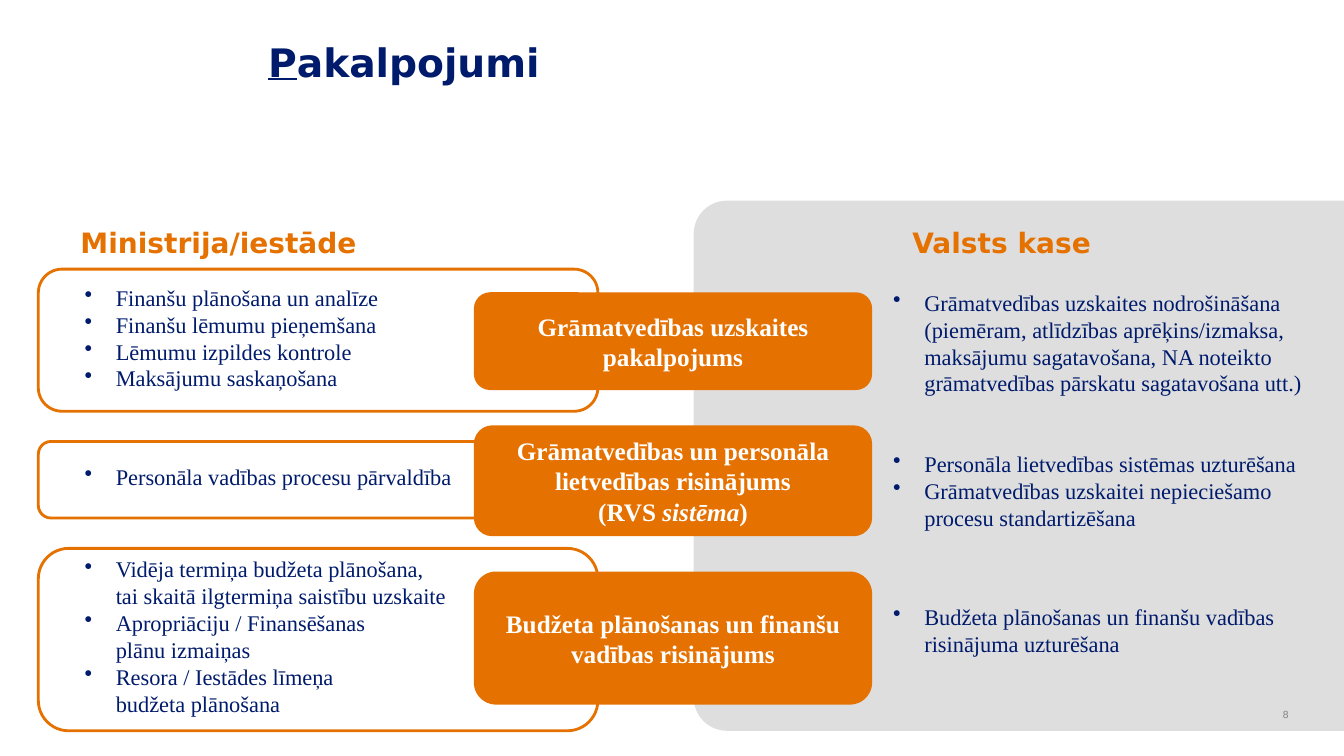
import collections
import dataclasses

import lxml.etree
import pptx
import pptx.dml.color
import pptx.enum.shapes
import pptx.enum.text
import pptx.oxml.ns
import pptx.util

Inches = pptx.util.Inches
Anchor = pptx.enum.text.MSO_ANCHOR
Align = pptx.enum.text.PP_ALIGN
Shapes = pptx.enum.shapes.MSO_SHAPE
Box = collections.namedtuple("Box", "left top width height")
Band = collections.namedtuple("Band", "outline service_box service ministry_box ministry treasury_box treasury")


@dataclasses.dataclass(frozen=True)
class Theme:
    navy: str = "001B6C"
    orange: str = "E57100"
    panel: str = "DEDEDE"
    white: str = "FFFFFF"
    grey: str = "898989"
    heading_font: str = "DejaVu Sans"
    body_font: str = "Times New Roman"
    title_size: int = 28
    heading_size: int = 20
    service_size: int = 18
    body_size: int = 16
    number_size: int = 7


THEME = Theme()
WIDTH, HEIGHT = 13.33, 7.5
BULLET_INDENT = 0.31

# Columns as (left, width)
OUTLINE = (0.38, 5.55)
SERVICE = (4.7, 3.95)
MINISTRY = (0.74, 3.95)
TREASURY = (8.76, 4.41)
HEADING_WIDTH = 3.27

# Each box of a band is a (top, height) pair; a vertical tab breaks a line
BANDS = [
    Band((2.67, 1.41), (2.9, 0.97), [("Grāmatvedības uzskaites pakalpojums", False)],
         (2.76, 1.18),
         ["Finanšu plānošana un analīze", "Finanšu lēmumu pieņemšana",
          "Lēmumu izpildes kontrole", "Maksājumu saskaņošana"],
         (2.81, 1.18),
         ["Grāmatvedības uzskaites nodrošināšana (piemēram, atlīdzības aprēķins/izmaksa, "
          "maksājumu sagatavošana, NA noteikto grāmatvedības pārskatu sagatavošana utt.)"]),
    Band((4.38, 0.76), (4.22, 1.1),
         [("Grāmatvedības un personāla lietvedības risinājums\v(RVS ", False),
          ("sistēma", True), (")", False)],
         (4.54, 0.37), ["Personāla vadības procesu pārvaldība"],
         (4.41, 0.91),
         ["Personāla lietvedības sistēmas uzturēšana",
          "Grāmatvedības uzskaitei nepieciešamo procesu standartizēšana"]),
    Band((5.44, 1.81), (5.67, 1.32),
         [("Budžeta plānošanas un finanšu vadības risinājums", False)],
         (5.45, 1.72),
         ["Vidēja termiņa budžeta plānošana,\vtai skaitā ilgtermiņa saistību uzskaite",
          "Apropriāciju / Finansēšanas\vplānu izmaiņas",
          "Resora / Iestādes līmeņa\vbudžeta plānošana"],
         (5.93, 0.64), ["Budžeta plānošanas un finanšu vadības risinājuma uzturēšana"]),
]


def cell(column, row):
    return Box(column[0], row[0], column[1], row[1])


def lengths(box):
    return [Inches(value) for value in box]


def color(value):
    return pptx.dml.color.RGBColor.from_string(value)


def set_font(paragraph, name, size, fill, bold=False):
    font = paragraph.font
    font.name, font.size, font.bold = name, pptx.util.Pt(size), bold
    font.color.rgb = color(fill)


def add_block(slide, kind, box, fill=None, line=None):
    shape = slide.shapes.add_shape(kind, *lengths(box))
    shape.shadow.inherit = False
    if fill:
        shape.fill.solid()
        shape.fill.fore_color.rgb = color(fill)
    else:
        shape.fill.background()
    if line:
        shape.line.color.rgb = color(line)
        shape.line.width = pptx.util.Pt(2)
    else:
        shape.line.fill.background()
    return shape


def add_panel(slide, box, radius):
    # A quarter turn puts the two rounded corners on the left
    upright = Box(box.left + (box.width - box.height) / 2,
                  box.top + (box.height - box.width) / 2, box.height, box.width)
    panel = add_block(slide, Shapes.ROUND_2_SAME_RECTANGLE, upright, fill=THEME.panel)
    panel.adjustments[0] = radius / box.height
    panel.rotation = 270


def add_text(slide, box, anchor=Anchor.TOP):
    frame = slide.shapes.add_textbox(*lengths(box)).text_frame
    frame.word_wrap = True
    frame.vertical_anchor = anchor
    return frame


def add_label(slide, box, text, size, fill, bold=False, align=Align.LEFT, anchor=Anchor.TOP):
    paragraph = add_text(slide, box, anchor).paragraphs[0]
    paragraph.text = text
    paragraph.alignment = align
    set_font(paragraph, THEME.heading_font, size, fill, bold)


def add_bullets(slide, box, items):
    frame = add_text(slide, box, Anchor.MIDDLE)
    for index, item in enumerate(items):
        paragraph = frame.paragraphs[0] if index == 0 else frame.add_paragraph()
        paragraph.text = item
        properties = paragraph._p.get_or_add_pPr()
        properties.set("marL", str(Inches(BULLET_INDENT)))
        properties.set("indent", str(-Inches(BULLET_INDENT)))
        lxml.etree.SubElement(properties, pptx.oxml.ns.qn("a:buChar")).set("char", "•")
        set_font(paragraph, THEME.body_font, THEME.body_size, THEME.navy)


def add_service(slide, box, runs):
    frame = add_block(slide, Shapes.ROUNDED_RECTANGLE, box, fill=THEME.orange).text_frame
    frame.word_wrap = True
    frame.vertical_anchor = Anchor.MIDDLE
    frame.margin_left = frame.margin_right = Inches(0.09)
    frame.margin_top = frame.margin_bottom = Inches(0.04)
    paragraph = frame.paragraphs[0]
    paragraph.alignment = Align.CENTER
    for text, italic in runs:
        before, *after = text.split("\v")
        paragraph.add_run().text = before
        for part in after:
            paragraph.add_line_break()
            paragraph.add_run().text = part
        if italic:
            paragraph.runs[-1].font.italic = True
    set_font(paragraph, THEME.body_font, THEME.service_size, THEME.white, bold=True)


def set_title(slide, box, initial, rest):
    title = slide.shapes.title
    title.left, title.top, title.width, title.height = lengths(box)
    frame = title.text_frame
    frame.word_wrap = True
    frame.auto_size = pptx.enum.text.MSO_AUTO_SIZE.NONE
    frame.vertical_anchor = Anchor.TOP
    paragraph = frame.paragraphs[0]
    paragraph.alignment = Align.LEFT
    first = paragraph.add_run()
    first.text = initial
    first.font.underline = True
    paragraph.add_run().text = rest
    set_font(paragraph, THEME.heading_font, THEME.title_size, THEME.navy, bold=True)


def main():
    presentation = pptx.Presentation()
    presentation.slide_width, presentation.slide_height = Inches(WIDTH), Inches(HEIGHT)
    slide = presentation.slides.add_slide(presentation.slide_layouts.get_by_name("Title Only"))

    # Title, treasury panel and column headings
    set_title(slide, Box(2.56, 0.33, 7.53, 1.19), "P", "akalpojumi")
    add_panel(slide, Box(6.88, 1.99, WIDTH - 6.88, 5.26), radius=0.33)
    for left, heading in ((0.7, "Ministrija/iestāde"), (8.95, "Valsts kase")):
        add_label(slide, Box(left, 2.19, HEADING_WIDTH, 0.44), heading,
                  THEME.heading_size, THEME.orange, bold=True)

    # One band per service: ministry tasks, service, treasury tasks
    for band in BANDS:
        add_block(slide, Shapes.ROUNDED_RECTANGLE, cell(OUTLINE, band.outline), line=THEME.orange)
        add_bullets(slide, cell(MINISTRY, band.ministry_box), band.ministry)
        add_service(slide, cell(SERVICE, band.service_box), band.service)
        add_bullets(slide, cell(TREASURY, band.treasury_box), band.treasury)

    # Slide number
    add_label(slide, Box(12.44, 6.92, 0.44, 0.33), "8", THEME.number_size, THEME.grey,
              align=Align.RIGHT, anchor=Anchor.MIDDLE)
    presentation.save("out.pptx")


if __name__ == "__main__":
    main()
